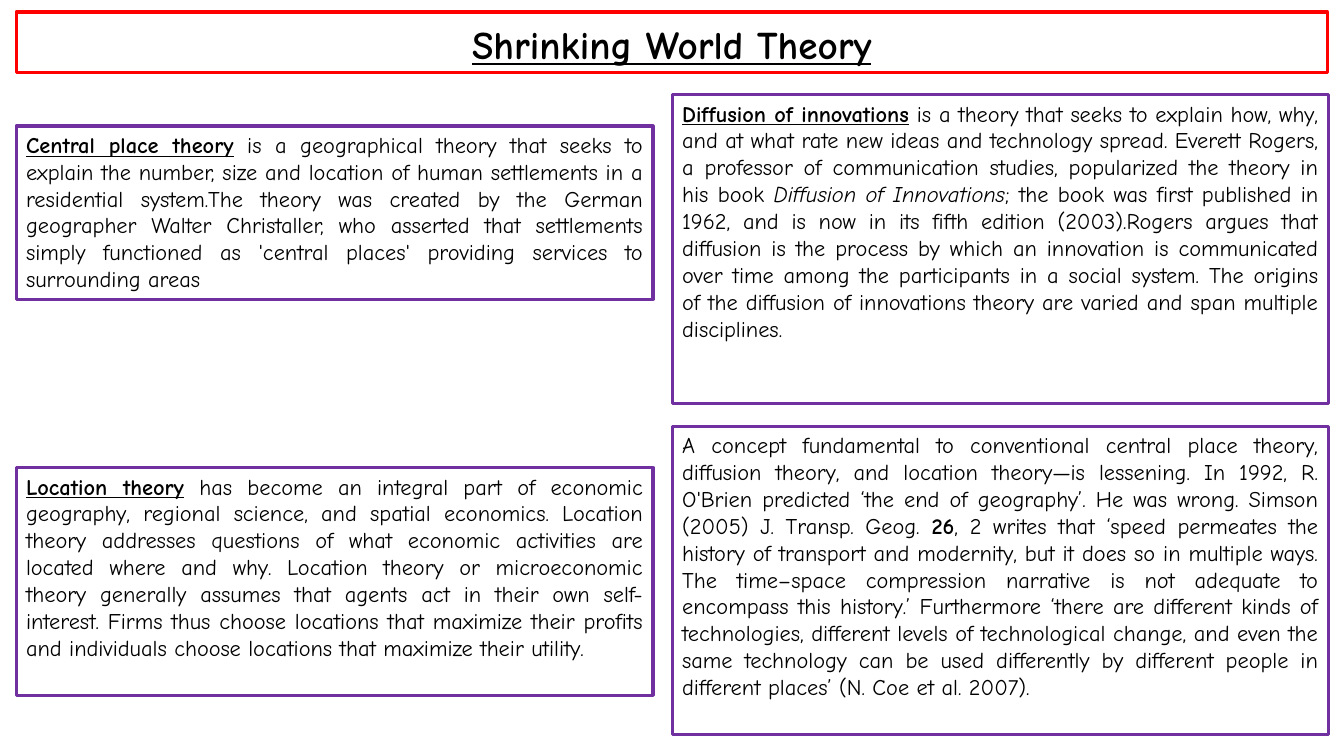
from dataclasses import dataclass

from pptx import Presentation
from pptx.dml.color import RGBColor
from pptx.enum.text import MSO_ANCHOR as Anchor, PP_ALIGN as Align
from pptx.util import Pt


@dataclass(frozen=True)
class Theme:
    font: str = "Comic Neue"
    ink: RGBColor = RGBColor(0, 0, 0)
    title_frame: RGBColor = RGBColor(0xFF, 0, 0)
    theory_frame: RGBColor = RGBColor(0x70, 0x30, 0xA0)
    title_size: float = 28
    body_size: float = 16
    frame_width: float = 2.25


class SlideBuilder:
    def __init__(self, slide, theme):
        self.slide = slide
        self.theme = theme

    def framed_box(self, area, color, spans, size, align):
        """Add an outlined text box; spans are (text, style) pairs, style using letters b, i, u."""
        box = self.slide.shapes.add_textbox(*(Pt(length) for length in area))
        box.line.color.rgb = color
        box.line.width = Pt(self.theme.frame_width)
        box.text_frame.word_wrap = True
        para = box.text_frame.paragraphs[0]
        para.alignment = align
        for text, style in spans:
            span = para.add_run()
            span.text = text
            font = span.font
            font.name = self.theme.font
            font.size = Pt(size)
            font.color.rgb = self.theme.ink
            font.bold = "b" in style
            font.italic = "i" in style
            font.underline = "u" in style
        return box

    def title(self, area, text):
        box = self.framed_box(area, self.theme.title_frame, [(text, "bu")],
                              self.theme.title_size, Align.CENTER)
        box.text_frame.vertical_anchor = Anchor.BOTTOM
        box.text_frame.paragraphs[0].line_spacing = 0.9

    def theory(self, area, spans):
        self.framed_box(area, self.theme.theory_frame, spans,
                        self.theme.body_size, Align.JUSTIFY)


LEFT, LEFT_WIDTH = 11.5, 455
RIGHT, RIGHT_WIDTH, RIGHT_HEIGHT = 480.2, 468.7, 220.3

THEORIES = [
    ((LEFT, 90, LEFT_WIDTH, 123.8), [
        ("Central place theory", "bu"),
        (" is a geographical theory that seeks to explain the number, size and "
         "location of human settlements in a residential system.The theory was "
         "created by the German geographer Walter Christaller, who asserted that "
         "settlements simply functioned as 'central places' providing services to "
         "surrounding areas", ""),
    ]),
    ((LEFT, 334.1, LEFT_WIDTH, 162.7), [
        ("Location theory", "bu"),
        (" has become an integral part of economic geography, regional science, "
         "and spatial economics. Location theory addresses questions of what "
         "economic activities are located where and why. Location theory "
         "or microeconomic theory generally assumes that agents act in their own "
         "self-interest. Firms thus choose locations that maximize their profits "
         "and individuals choose locations that maximize their utility.", ""),
    ]),
    ((RIGHT, 67.7, RIGHT_WIDTH, RIGHT_HEIGHT), [
        ("Diffusion of innovations", "bu"),
        (" is a theory that seeks to explain how, why, and at what rate "
         "new ideas and technology spread. Everett Rogers, a professor "
         "of communication studies, popularized the theory in his book ", ""),
        ("Diffusion of Innovations", "i"),
        ("; the book was first published in 1962, and is now in its fifth edition "
         "(2003).Rogers argues that diffusion is the process by which "
         "an innovation is communicated over time among the participants in a "
         "social system. The origins of the diffusion of innovations theory are "
         "varied and span multiple disciplines.", ""),
    ]),
    ((RIGHT, 304.6, RIGHT_WIDTH, RIGHT_HEIGHT), [
        ("A concept fundamental to conventional central place theory, diffusion "
         "theory, and location theory—is lessening. In 1992, R. O'Brien predicted "
         "‘the end of geography’. He was wrong. Simson (2005) J. Transp. Geog. ", ""),
        ("26", "b"),
        (", 2 writes that ‘speed permeates the history of transport and modernity, "
         "but it does so in multiple ways. The time–space compression narrative is "
         "not adequate to encompass this history.’ Furthermore ‘there are different "
         "kinds of technologies, different levels of technological change, and even "
         "the same technology can be used differently by different people in "
         "different places’ (N. Coe et al. 2007).", ""),
    ]),
]


def main():
    deck = Presentation()
    deck.slide_width, deck.slide_height = Pt(960), Pt(540)
    page = SlideBuilder(deck.slides.add_slide(deck.slide_layouts[6]), Theme())
    page.title((LEFT, 8.6, 936.7, 43.2), "Shrinking World Theory")
    for area, spans in THEORIES:
        page.theory(area, spans)
    deck.save("out.pptx")


if __name__ == "__main__":
    main()
